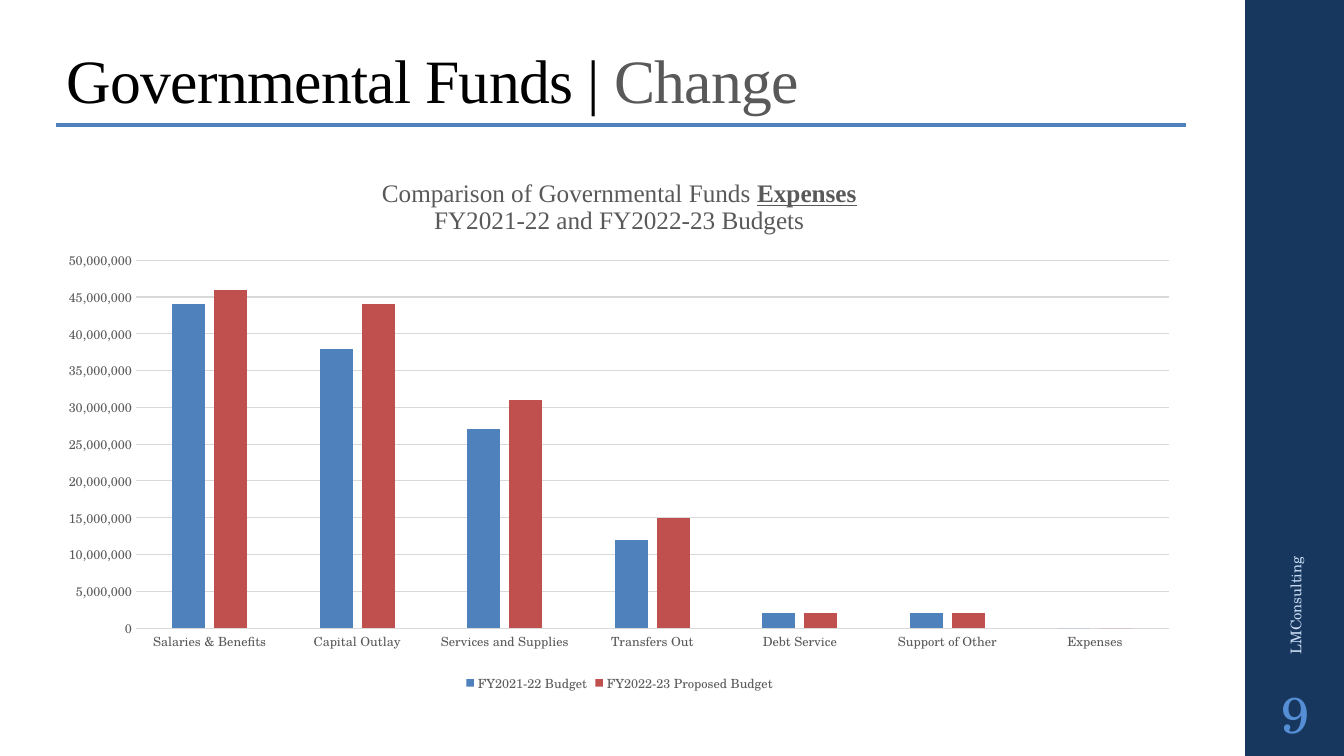
import pptx
import pptx.chart.data
import pptx.dml.color
import pptx.enum.chart
import pptx.enum.shapes
import pptx.enum.text
import pptx.oxml
import pptx.oxml.ns
import pptx.util
from lxml import etree

Inches = pptx.util.Inches
Pt = pptx.util.Pt
RGBColor = pptx.dml.color.RGBColor
Align = pptx.enum.text.PP_ALIGN

NAVY = RGBColor(0x17, 0x37, 0x5E)
BLUE = RGBColor(0x4F, 0x81, 0xBD)
RED = RGBColor(0xC0, 0x50, 0x4D)
BLACK = RGBColor(0, 0, 0)
GRAY = RGBColor(0x59, 0x59, 0x59)
GRID = RGBColor(0xD9, 0xD9, 0xD9)
PALE_BLUE = RGBColor(0xC6, 0xD9, 0xF1)
MID_BLUE = RGBColor(0x55, 0x8E, 0xD5)
SERIF = "Times New Roman"
BODY = "TeX Gyre Schola"

CATEGORIES = ["Salaries & Benefits", "Capital Outlay", "Services and Supplies",
              "Transfers Out", "Debt Service", "Support of Other", "Expenses"]
MILLION = 1000000
BUDGETS = [  # values in millions
    ("FY2021-22 Budget", BLUE, [44, 38, 27, 12, 2, 2, 0]),
    ("FY2022-23 Proposed Budget", RED, [46, 44, 31, 15, 2, 2, 0]),
]


def set_font(font, size, color, name=BODY):
    font.size = Pt(size)
    font.color.rgb = color
    font.name = name


def set_layout(element, **fractions):
    """Place a chart part by fractions of the chart area."""
    qn = pptx.oxml.ns.qn
    layout = element.find(qn("c:layout"))
    if layout is None:
        layout = etree.Element(qn("c:layout"))
        tx = element.find(qn("c:tx"))
        if tx is None:
            element.insert(0, layout)
        else:
            tx.addnext(layout)
    for child in list(layout):
        layout.remove(child)
    manual = etree.SubElement(layout, qn("c:manualLayout"))
    if "w" in fractions:
        etree.SubElement(manual, qn("c:layoutTarget")).set("val", "inner")
    for side in ("xMode", "yMode"):
        etree.SubElement(manual, qn("c:" + side)).set("val", "edge")
    for key, value in fractions.items():
        etree.SubElement(manual, qn("c:" + key)).set("val", str(value))


class BudgetSlide:
    def __init__(self, prs):
        self.s = prs.slides.add_slide(prs.slide_layouts[5])

    def band(self, x, y, w, h, color):
        sp = self.s.shapes.add_shape(pptx.enum.shapes.MSO_SHAPE.RECTANGLE,
                                     Inches(x), Inches(y), Inches(w), Inches(h))
        sp.shadow.inherit = False
        sp.fill.solid()
        sp.fill.fore_color.rgb = color
        sp.line.fill.background()

    def rule(self, x1, x2, y, color, width):
        line = self.s.shapes.add_connector(pptx.enum.shapes.MSO_CONNECTOR.STRAIGHT,
                                           Inches(x1), Inches(y), Inches(x2), Inches(y))
        line.line.color.rgb = color
        line.line.width = Pt(width)
        etree.SubElement(line._element.spPr, pptx.oxml.ns.qn("a:effectLst"))

    def title(self, x, y, w, h, parts):
        sp = self.s.shapes.title
        sp.left, sp.top, sp.width, sp.height = map(Inches, (x, y, w, h))
        tf = sp.text_frame
        tf.margin_left = tf.margin_right = tf.margin_top = tf.margin_bottom = 0
        tf.vertical_anchor = pptx.enum.text.MSO_ANCHOR.MIDDLE
        tf.auto_size = pptx.enum.text.MSO_AUTO_SIZE.SHAPE_TO_FIT_TEXT
        p = tf.paragraphs[0]
        p.alignment = Align.LEFT
        p.line_spacing = 0.9
        for text, color in parts:
            r = p.add_run()
            r.text = text
            set_font(r.font, 44, color, SERIF)
            r._r.get_or_add_rPr().set("spc", "-50")

    def text(self, x, y, w, h, text, size, color, align=Align.LEFT, rotation=0, inset=None):
        sp = self.s.shapes.add_textbox(Inches(x), Inches(y), Inches(w), Inches(h))
        sp.rotation = rotation
        tf = sp.text_frame
        tf.word_wrap = True
        tf.vertical_anchor = pptx.enum.text.MSO_ANCHOR.MIDDLE
        if inset is not None:
            tf.margin_left = tf.margin_right = Inches(inset)
            tf.margin_top = tf.margin_bottom = Inches(inset)
        tf.text = text
        p = tf.paragraphs[0]
        p.alignment = align
        set_font(p.runs[0].font, size, color)

    def chart(self, x, y, w, h, title_lines):
        data = pptx.chart.data.CategoryChartData(number_format="#,##0")
        data.categories = CATEGORIES
        for name, _, values in BUDGETS:
            data.add_series(name, [value * MILLION for value in values])
        chart = self.s.shapes.add_chart(
            pptx.enum.chart.XL_CHART_TYPE.COLUMN_CLUSTERED,
            Inches(x), Inches(y), Inches(w), Inches(h), data).chart
        set_font(chart.font, 10, BLACK)
        self.chart_title(chart, title_lines)

        plot = chart.plots[0]
        plot.gap_width = 219
        plot.overlap = -27
        plot.vary_by_categories = False
        for series, (_, color, _) in zip(plot.series, BUDGETS):
            series.format.fill.solid()
            series.format.fill.fore_color.rgb = color
        set_layout(chart._chartSpace.chart.plotArea, x=0.078, y=0.188, w=0.901, h=0.685)

        for axis in (chart.category_axis, chart.value_axis):
            axis.major_tick_mark = pptx.enum.chart.XL_TICK_MARK.NONE
            axis.minor_tick_mark = pptx.enum.chart.XL_TICK_MARK.NONE
            set_font(axis.tick_labels.font, 9, GRAY)
        values = chart.value_axis
        values.minimum_scale, values.maximum_scale = 0, 50 * MILLION
        values.major_unit = 5 * MILLION
        values.tick_labels.number_format = "#,##0"
        values.tick_labels.number_format_is_linked = False
        values.format.line.fill.background()
        for line in (chart.category_axis.format.line, values.major_gridlines.format.line):
            line.color.rgb = GRID
            line.width = Pt(0.75)

        chart.has_legend = True
        chart.legend.position = pptx.enum.chart.XL_LEGEND_POSITION.BOTTOM
        chart.legend.include_in_layout = False
        set_font(chart.legend.font, 9, GRAY)

    def chart_title(self, chart, lines):
        """Write the heading; each line is a list of (text, emphasised) pairs."""
        chart.has_title = True
        tf = chart.chart_title.text_frame
        for i, line in enumerate(lines):
            p = tf.add_paragraph() if i else tf.paragraphs[0]
            p.alignment = Align.CENTER
            for text, emphasised in line:
                r = p.add_run()
                r.text = text
                set_font(r.font, 18, GRAY, SERIF)
                r.font.bold = r.font.underline = emphasised
        chart.chart_title.include_in_layout = False
        set_layout(chart.chart_title._element, x=0.29, y=0.03)


def main():
    prs = pptx.Presentation()
    prs.slide_width, prs.slide_height = Inches(13.33), Inches(7.5)
    slide = BudgetSlide(prs)
    slide.band(12.35, 0, 1, 7.5, NAVY)
    slide.rule(0.56, 11.76, 1.24, BLUE, 2.25)
    slide.title(0.66, 0.49, 11.45, 0.67,
                [("Governmental Funds | ", BLACK), ("Change", GRAY)])
    slide.text(10.89, 4.43, 3.92, 0.4, "LMConsulting", 10.5, PALE_BLUE, rotation=270)
    slide.text(12.35, 6.75, 1, 0.65, "9", 36, MID_BLUE, Align.CENTER, inset=0.05)
    slide.chart(0.46, 1.58, 11.37, 5.33, [
        [("Comparison of Governmental Funds ", False), ("Expenses", True)],
        [("FY2021-22 and FY2022-23 Budgets", False)],
    ])
    prs.save("out.pptx")


if __name__ == "__main__":
    main()
